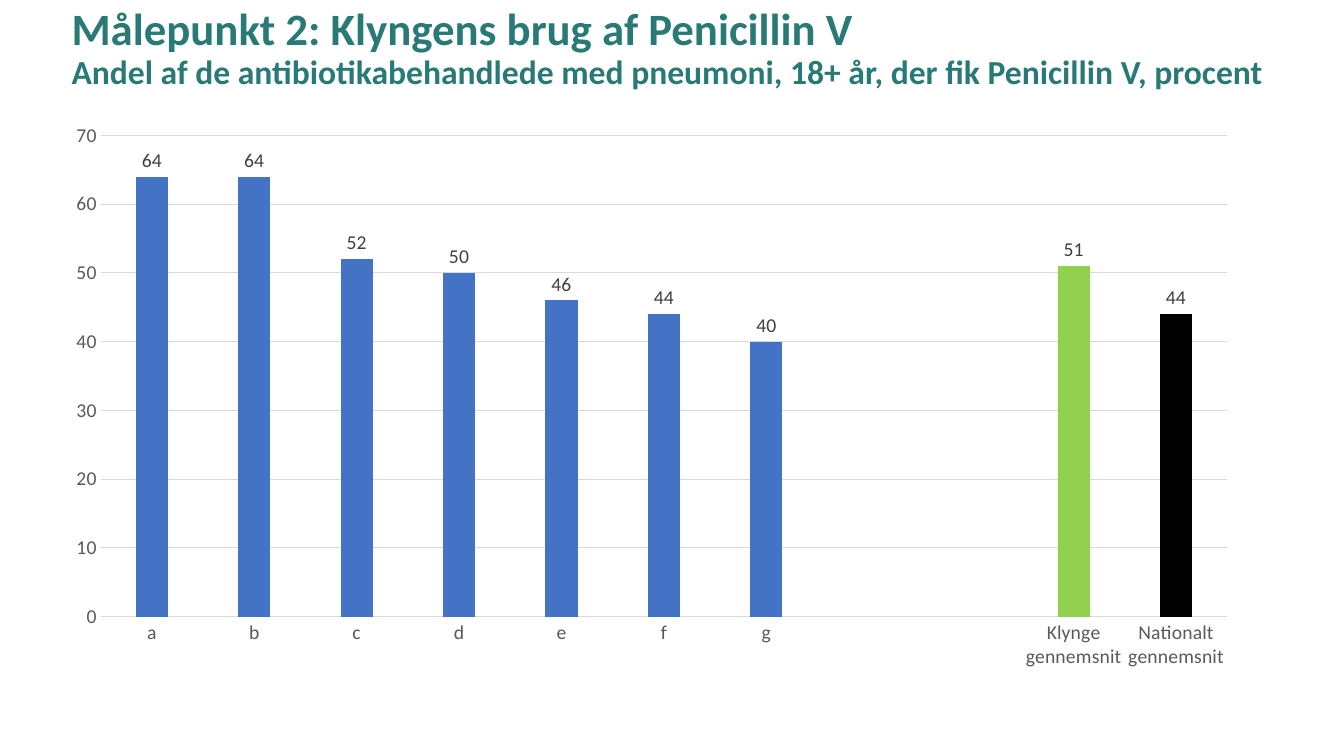
from dataclasses import dataclass
from typing import Optional

from pptx import Presentation
from pptx.chart.data import CategoryChartData
from pptx.dml.color import RGBColor
from pptx.enum.chart import XL_CHART_TYPE, XL_LABEL_POSITION, XL_TICK_MARK
from pptx.enum.text import MSO_ANCHOR, MSO_AUTO_SIZE, PP_ALIGN
from pptx.util import Inches, Pt

FONT = "Calibri"
WIDTH, HEIGHT = Inches(13.33), Inches(7.5)
COLORS = {
    "title": "297A77",
    "unit": "4472C4",
    "cluster": "92D050",
    "national": "000000",
    "axis": "595959",
    "label": "404040",
    "grid": "D9D9D9",
}


@dataclass(frozen=True)
class Box:
    """Left, top, width and height in inches on the slide."""
    left: float
    top: float
    width: float
    height: float

    def emu(self) -> tuple:
        return tuple(Inches(v) for v in (self.left, self.top, self.width, self.height))


@dataclass(frozen=True)
class Bar:
    label: str
    value: Optional[int]
    color: str = "unit"


@dataclass(frozen=True)
class TitleLine:
    text: str
    size: int


TITLE_BOX = Box(0.61, 0.27, 12.11, 0.8)
CHART_BOX = Box(0.52, 1.11, 11.89, 5.64)
TITLE_LINES = [
    TitleLine("Målepunkt 2: Klyngens brug af Penicillin V", 32),
    TitleLine("Andel af de antibiotikabehandlede med pneumoni, 18+ år, "
              "der fik Penicillin V, procent", 24),
]
UNITS = [Bar(name, value) for name, value in zip("abcdefg", (64, 64, 52, 50, 46, 44, 40))]
GAP = [Bar("", None)] * 2
AVERAGES = [
    Bar("Klynge gennemsnit", 51, "cluster"),
    Bar("Nationalt gennemsnit", 44, "national"),
]


def rgb(name: str) -> RGBColor:
    return RGBColor.from_string(COLORS[name])


def style_font(font, size: int, color: str, bold: bool = False) -> None:
    font.name, font.size, font.bold = FONT, Pt(size), bold
    font.color.rgb = rgb(color)


def fill_solid(fill, color: str) -> None:
    fill.solid()
    fill.fore_color.rgb = rgb(color)


def style_line(line, color: str) -> None:
    line.color.rgb = rgb(color)
    line.width = Pt(0.75)


def add_title(s, box: Box, lines: list[TitleLine]) -> None:
    title = s.shapes.title
    title.left, title.top, title.width, title.height = box.emu()
    tf = title.text_frame
    tf.word_wrap = True
    tf.auto_size = MSO_AUTO_SIZE.NONE
    tf.vertical_anchor = MSO_ANCHOR.MIDDLE
    tf.margin_bottom = Inches(0.42)
    p = tf.paragraphs[0]
    p.text = "\v".join(line.text for line in lines)
    p.alignment = PP_ALIGN.LEFT
    p.line_spacing = 0.9
    for r, line in zip(p.runs, lines):
        style_font(r.font, line.size, "title", bold=True)


def add_bar_chart(s, box: Box, bars: list[Bar]) -> None:
    data = CategoryChartData(number_format="0")
    data.categories = [bar.label for bar in bars]
    data.add_series("Series 1", [bar.value for bar in bars])
    chart = s.shapes.add_chart(XL_CHART_TYPE.COLUMN_CLUSTERED, *box.emu(), data).chart
    chart.has_legend = chart.has_title = False
    style_font(chart.font, 14, "national")

    for axis in (chart.category_axis, chart.value_axis):
        axis.major_tick_mark = axis.minor_tick_mark = XL_TICK_MARK.NONE
        style_font(axis.tick_labels.font, 14, "axis")
    style_line(chart.category_axis.format.line, "grid")
    values = chart.value_axis
    values.minimum_scale, values.maximum_scale, values.major_unit = 0, 70, 10
    values.format.line.fill.background()
    style_line(values.major_gridlines.format.line, "grid")

    plot = chart.plots[0]
    plot.gap_width, plot.overlap, plot.vary_by_categories = 219, -27, False
    plot.has_data_labels = True
    labels = plot.data_labels
    labels.show_value = True
    labels.position = XL_LABEL_POSITION.OUTSIDE_END
    style_font(labels.font, 14, "label")

    series = plot.series[0]
    series.invert_if_negative = False
    fill_solid(series.format.fill, "unit")
    for i, bar in enumerate(bars):
        if bar.color != "unit":
            fill_solid(series.points[i].format.fill, bar.color)


def main() -> None:
    prs = Presentation()
    prs.slide_width, prs.slide_height = WIDTH, HEIGHT
    s = prs.slides.add_slide(prs.slide_layouts.get_by_name("Title Only"))
    add_title(s, TITLE_BOX, TITLE_LINES)
    add_bar_chart(s, CHART_BOX, UNITS + GAP + AVERAGES)
    prs.save("out.pptx")


if __name__ == "__main__":
    main()
